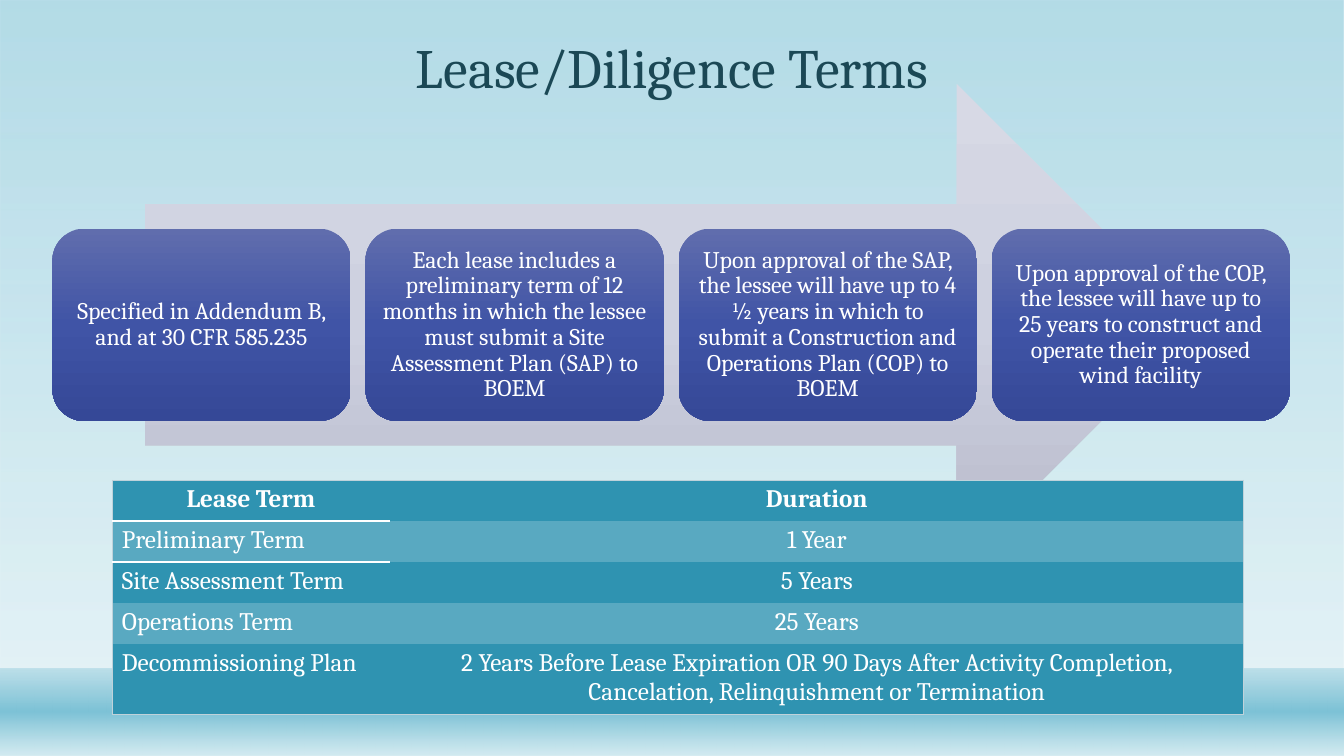
import dataclasses
import typing

import pptx
import pptx.dml.color
import pptx.enum.shapes
import pptx.enum.text
import pptx.oxml
import pptx.oxml.ns
import pptx.util

Cm = pptx.util.Cm
Pt = pptx.util.Pt
KIND = pptx.enum.shapes.MSO_SHAPE
ALIGN = pptx.enum.text.PP_ALIGN
ANCHOR = pptx.enum.text.MSO_ANCHOR
NS = pptx.oxml.ns.nsdecls("a")

HUES = {
    "sky": "7DC2D6", "haze": "D4EBF1", "title": "1B4855", "white": "FFFFFF",
    "row": "2F93B1", "band": "59A9C1", "edge": "BFD2DA",
    "tail_top": "D7D9E5", "tail_mid": "CED1E0", "tail_end": "B6B8C9",
    "card_top": "606DAD", "card_mid": "4054A6", "card_end": "354897",
}


class Stop(typing.NamedTuple):
    place: int
    hue: str
    alpha: int = 100


@dataclasses.dataclass(frozen=True)
class Block:
    """A borderless shape with a downward gradient; lengths in cm."""
    kind: KIND
    left: float
    top: float
    width: float
    height: float
    stops: tuple[Stop, ...]
    text: str = ""


def fade(name: str) -> tuple[Stop, ...]:
    return Stop(0, name + "_top"), Stop(50, name + "_mid"), Stop(100, name + "_end")


WIDE, HIGH = 33.87, 19.05
SEA = 16.84
NOTES = (
    "Specified in Addendum B, and at 30 CFR 585.235",
    "Each lease includes a preliminary term of 12 months in which the lessee "
    "must submit a Site Assessment Plan (SAP) to BOEM",
    "Upon approval of the SAP, the lessee will have up to 4 ½ years in which to "
    "submit a Construction and Operations Plan (COP) to BOEM",
    "Upon approval of the COP, the lessee will have up to 25 years to construct "
    "and operate their proposed wind facility",
)
BLOCKS = [
    Block(KIND.RECTANGLE, 0, 0, WIDE, HIGH, (Stop(0, "sky", 58), Stop(88, "haze", 65))),
    Block(KIND.RECTANGLE, 0, SEA, WIDE, HIGH - SEA,
          (Stop(1, "sky", 38), Stop(49, "sky"), Stop(100, "haze", 89))),
    Block(KIND.RIGHT_ARROW, 3.66, 2.11, 26.52, 12.14, fade("tail")),
] + [
    Block(KIND.ROUNDED_RECTANGLE, 1.32 + 7.89 * i, 5.76, 7.52, 4.85, fade("card"), note)
    for i, note in enumerate(NOTES)
]

TERMS = (
    ("Lease Term", "Duration"),
    ("Preliminary Term", "1 Year"),
    ("Site Assessment Term", "5 Years"),
    ("Operations Term", "25 Years"),
    ("Decommissioning Plan",
     "2 Years Before Lease Expiration OR 90 Days After Activity Completion, "
     "Cancelation, Relinquishment or Termination"),
)
COLS = (7.01, 21.51)
ROWS = (1.03, 1.03, 1.03, 1.03, 1.74)
PLAIN = "{2D5ABB26-0587-4C30-8999-92F81FD0307C}"

FRAME = {"word_wrap": True, "vertical_anchor": ANCHOR.MIDDLE} | {
    "margin_" + side: Cm(0.18) for side in ("left", "right", "top", "bottom")}
HEAD = FRAME | {"vertical_anchor": ANCHOR.TOP, "margin_top": 0}
TIGHT = {"alignment": ALIGN.CENTER, "line_spacing": 0.9}


def apply(thing: typing.Any, form: dict[str, typing.Any]) -> None:
    for name, value in form.items():
        setattr(thing, name, value)


def write(frame, text: str, size: float, hue: str, form: dict, bold: bool = False) -> None:
    para = frame.paragraphs[0]
    apply(para, form)
    run = para.add_run()
    run.text = text
    apply(run.font, {"name": "Cambria", "size": Pt(size), "bold": bold})
    run.font.color.rgb = pptx.dml.color.RGBColor.from_string(HUES[hue])


def blend(shape, stops: tuple[Stop, ...]) -> None:
    """Fill a shape from top to bottom, with any number of stops."""
    marks = "".join(
        f'<a:gs pos="{s.place * 1000}"><a:srgbClr val="{HUES[s.hue]}">'
        f'<a:alpha val="{s.alpha * 1000}"/></a:srgbClr></a:gs>' for s in stops)
    grad = pptx.oxml.parse_xml(
        f'<a:gradFill {NS} rotWithShape="1"><a:gsLst>{marks}</a:gsLst>'
        '<a:lin ang="5400000" scaled="0"/></a:gradFill>')
    shape._element.spPr.find(pptx.oxml.ns.qn("a:prstGeom")).addnext(grad)


def draw(slide, block: Block) -> None:
    shape = slide.shapes.add_shape(
        block.kind, Cm(block.left), Cm(block.top), Cm(block.width), Cm(block.height))
    blend(shape, block.stops)
    shape.line.fill.background()
    shape.shadow.inherit = False
    if block.text:
        apply(shape.text_frame, FRAME)
        write(shape.text_frame, block.text, 17, "white", TIGHT)


def edge(cell, side: str, hue: str, width: float) -> None:
    cell._tc.get_or_add_tcPr().append(pptx.oxml.parse_xml(
        f'<a:ln{side} {NS} w="{Pt(width)}"><a:solidFill>'
        f'<a:srgbClr val="{HUES[hue]}"/></a:solidFill></a:ln{side}>'))


def fill_cell(cell, row: int, col: int) -> None:
    last = len(ROWS) - 1
    rims = {"L": col == 0, "R": col == 1, "T": row == 0, "B": row == last}
    for side, rim in rims.items():
        if rim:
            edge(cell, side, "edge", 0.5)
        elif (row, col, side) in ((0, 0, "B"), (1, 0, "T")):
            edge(cell, side, "white", 1.5)
    cell.fill.solid()
    tone = HUES["band" if row % 2 else "row"]
    cell.fill.fore_color.rgb = pptx.dml.color.RGBColor.from_string(tone)
    side = ALIGN.LEFT if row and not col else ALIGN.CENTER
    write(cell.text_frame, TERMS[row][col], 18, "white", {"alignment": side}, row == 0)


def add_terms(slide) -> None:
    table = slide.shapes.add_table(
        len(ROWS), len(COLS), Cm(2.82), Cm(12.1), Cm(sum(COLS)), Cm(sum(ROWS))).table
    apply(table, {"first_row": False, "horz_banding": False})
    table._tbl.tblPr.find(pptx.oxml.ns.qn("a:tableStyleId")).text = PLAIN
    for col, width in enumerate(COLS):
        table.columns[col].width = Cm(width)
    for row, height in enumerate(ROWS):
        table.rows[row].height = Cm(height)
        for col in range(len(COLS)):
            fill_cell(table.cell(row, col), row, col)


def main() -> None:
    deck = pptx.Presentation()
    apply(deck, {"slide_width": Cm(WIDE), "slide_height": Cm(HIGH)})
    slide = deck.slides.add_slide(deck.slide_layouts[6])
    for block in BLOCKS:
        draw(slide, block)
    title = slide.shapes.add_textbox(Cm(0.58), Cm(1.02), Cm(32.72), Cm(3.02))
    apply(title.text_frame, HEAD)
    write(title.text_frame, "Lease/Diligence Terms", 39.6, "title", TIGHT)
    add_terms(slide)
    deck.save("out.pptx")


if __name__ == "__main__":
    main()
